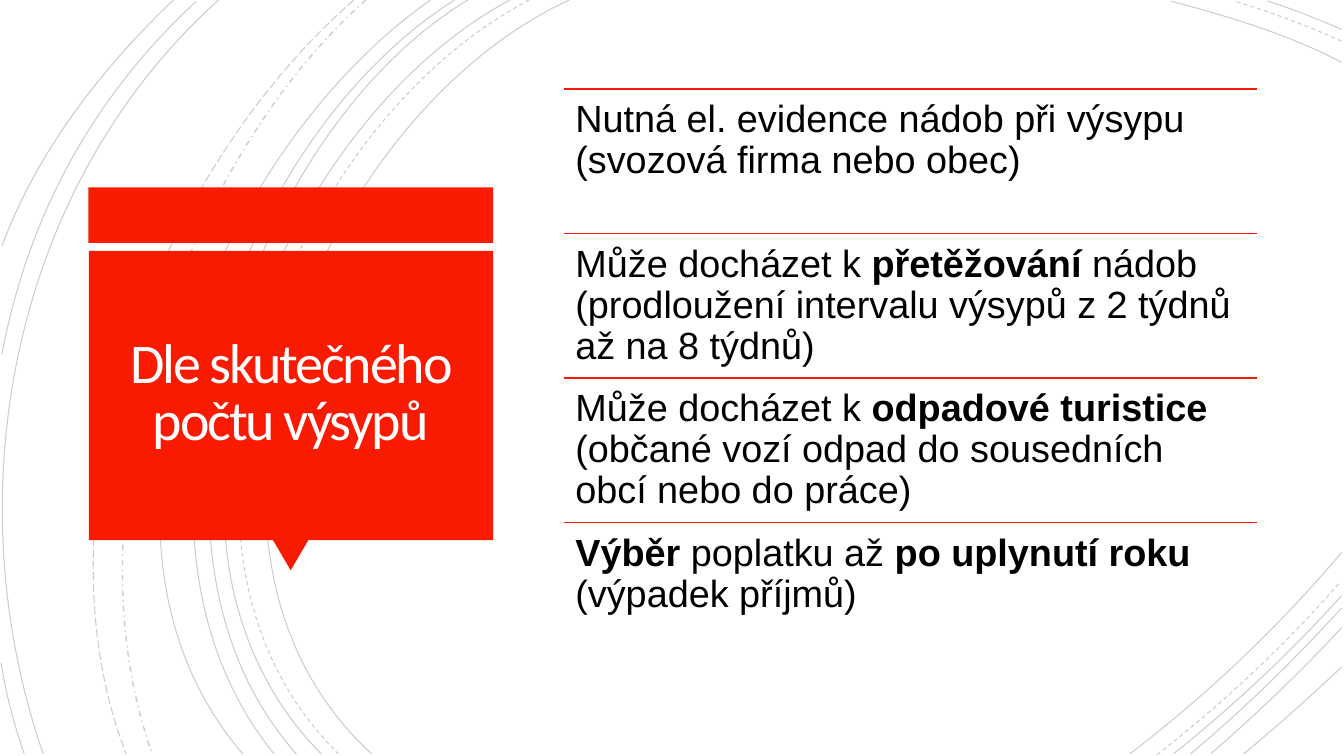
from lxml.etree import SubElement
from pptx import Presentation
from pptx.dml.color import RGBColor
from pptx.enum.dml import MSO_LINE
from pptx.enum.shapes import MSO_CONNECTOR, MSO_SHAPE
from pptx.enum.text import MSO_ANCHOR, PP_ALIGN
from pptx.oxml.ns import qn
from pptx.util import Cm, Pt

RED, BLACK, WHITE = "F81B02", "000000", "FFFEFF"


def color(hex_string):
    return RGBColor.from_string(hex_string)


def add_text_area(left, top, width, height, inset):
    """Add a wrapping text box with equal insets and return its text frame."""
    frame = slide.shapes.add_textbox(Cm(left), Cm(top), Cm(width), Cm(height)).text_frame
    frame.word_wrap = True
    frame.margin_left = frame.margin_right = Cm(inset)
    frame.margin_top = frame.margin_bottom = Cm(inset)
    return frame


prs = Presentation()
prs.slide_width, prs.slide_height = Cm(33.87), Cm(19.05)
slide = prs.slides.add_slide(prs.slide_layouts[6])
slide.background.fill.solid()
slide.background.fill.fore_color.rgb = color("FFFFFF")

# Background arcs: start, two Bezier control points and end, in cm
solid_arcs = [
    ((14.35, 0), (8, 2.92), (3.63, 13.72), (9.37, 19)),
    ((12.85, 0), (6.86, 3.23), (2.79, 13.64), (8.1, 19)),
    ((11.79, 0), (6.2, 3.38), (2.79, 13.74), (7.47, 19)),
    ((11.46, 0), (5.87, 3.51), (2.46, 13.54), (6.91, 19)),
    ((10.85, 0), (5.51, 3.73), (1.35, 13.44), (6.12, 19)),
    ((5.51, 0), (0.28, 4.7), (-1.17, 12.45), (1.09, 19)),
    ((4.95, 0.03), (2.34, 2.44), (0.71, 5.44), (0.05, 8.92)),
    ((0.03, 16.71), (0.15, 17.5), (0.36, 18.26), (0.61, 19)),
    ((4.37, 0), (2.54, 1.75), (0.94, 3.81), (0.05, 6.2)),
    ((33.81, 1.57), (32.46, 0.86), (30.94, 0.41), (29.51, 0.03)),
    ((33.81, 0.74), (33.2, 0.48), (32.59, 0.23), (31.95, 0.03)),
    ((28.47, 19), (30.4, 17.53), (32.23, 15.8), (33.81, 13.92)),
    ((29.57, 19), (31.06, 17.81), (32.51, 16.46), (33.81, 15.01)),
    ((30, 19), (31.34, 17.88), (32.61, 16.64), (33.81, 15.32)),
    ((30.51, 19), (31.65, 18.01), (32.77, 16.94), (33.81, 15.82)),
    ((31.34, 19), (32.18, 18.31), (32.99, 17.58), (33.81, 16.81)),
]
dashed_arcs = [
    ((13.34, 0), (7.24, 3.18), (3.12, 13.64), (8.53, 19)),
    ((33.81, 1.04), (32.94, 0.64), (32, 0.3), (31.12, 0.03)),
    ((29.16, 19.02), (30.81, 17.73), (32.39, 16.26), (33.78, 14.66)),
]
dash_dot_arcs = [((9.22, 0), (4.47, 4.22), (1.65, 12.93), (3.84, 19))]
long_dash_arcs = [((8.92, 0), (3.99, 4.29), (0.74, 12.67), (3.18, 19))]

for arcs, dash, weight in [
    (solid_arcs, MSO_LINE.SOLID, 0.75),
    (dashed_arcs, MSO_LINE.DASH, 0.75),
    (dash_dot_arcs, MSO_LINE.DASH_DOT, 1),
    (long_dash_arcs, MSO_LINE.LONG_DASH, 0.75),
]:
    for arc in arcs:
        start, *bends = [(Cm(x), Cm(y)) for x, y in arc]
        builder = slide.shapes.build_freeform(*start)
        builder.add_line_segments(bends, close=False)
        curve = builder.convert_to_shape()
        # Turn the three line segments into one cubic Bezier segment
        outline = curve._element.find(".//" + qn("a:path"))
        bezier = SubElement(outline, qn("a:cubicBezTo"))
        for segment in outline.findall(qn("a:lnTo")):
            bezier.append(segment[0])
            outline.remove(segment)
        curve.shadow.inherit = False
        curve.fill.background()
        curve.line.color.rgb = color(BLACK)
        curve.line.width = Pt(weight)
        curve.line.dash_style = dash
        line_color = curve._element.spPr.find(qn("a:ln")).find(".//" + qn("a:srgbClr"))
        SubElement(line_color, qn("a:alpha"), val="20000")

# Red title panel with its pointer
for preset, left, top, width, height, rotation in [
    (MSO_SHAPE.RECTANGLE, 2.23, 4.72, 10.2, 1.4, 0),
    (MSO_SHAPE.ISOSCELES_TRIANGLE, 6.88, 13.61, 0.89, 0.76, 180),
    (MSO_SHAPE.RECTANGLE, 2.24, 6.32, 10.19, 7.29, 0),
]:
    panel = slide.shapes.add_shape(preset, Cm(left), Cm(top), Cm(width), Cm(height))
    panel.rotation = rotation
    panel.shadow.inherit = False
    panel.fill.solid()
    panel.fill.fore_color.rgb = color(RED)
    panel.line.fill.background()

title = add_text_area(2.46, 6.53, 9.73, 6.83, 0.64)
title.vertical_anchor = MSO_ANCHOR.MIDDLE
title.text = "Dle skutečného počtu výsypů"
heading = title.paragraphs[0]
heading.alignment = PP_ALIGN.CENTER
heading.line_spacing = 0.85
heading_run = heading.runs[0]
heading_run.font.name = "Calibri"
heading_run.font.size = Pt(40)
heading_run.font.color.rgb = color(WHITE)
heading_run._r.get_or_add_rPr().set("spc", "-150")

# Points: pieces of text, each with its bold flag
points = [
    [("Nutná el. evidence nádob při výsypu (svozová firma nebo obec)", False)],
    [("Může docházet k ", False), ("přetěžování", True),
     (" nádob (prodloužení intervalu výsypů z 2 týdnů až na 8 týdnů)", False)],
    [("Může docházet k ", False), ("odpadové turistice ", True),
     ("(občané vozí odpad do sousedních obcí nebo do práce)", False)],
    [("Výběr", True), (" poplatku až ", False), ("po uplynutí roku ", True),
     ("(výpadek příjmů)", False)],
]
LIST_LEFT, LIST_TOP, LIST_WIDTH, LIST_HEIGHT = 14.22, 2.24, 17.45, 14.57
row_height = LIST_HEIGHT / len(points)

for row, pieces in enumerate(points):
    top = LIST_TOP + row * row_height
    rule = slide.shapes.add_connector(
        MSO_CONNECTOR.STRAIGHT, Cm(LIST_LEFT), Cm(top), Cm(LIST_LEFT + LIST_WIDTH), Cm(top))
    rule.line.color.rgb = color(RED)
    rule.line.width = Pt(1.25)
    SubElement(rule._element.spPr, qn("a:effectLst"))

    paragraph = add_text_area(LIST_LEFT, top, LIST_WIDTH, row_height, 0.28).paragraphs[0]
    paragraph.line_spacing = 0.9
    for wording, bold in pieces:
        run = paragraph.add_run()
        run.text = wording
        run.font.name = "Arial"
        run.font.size = Pt(27)
        run.font.bold = bold
        run.font.color.rgb = color(BLACK)

prs.save("out.pptx")
